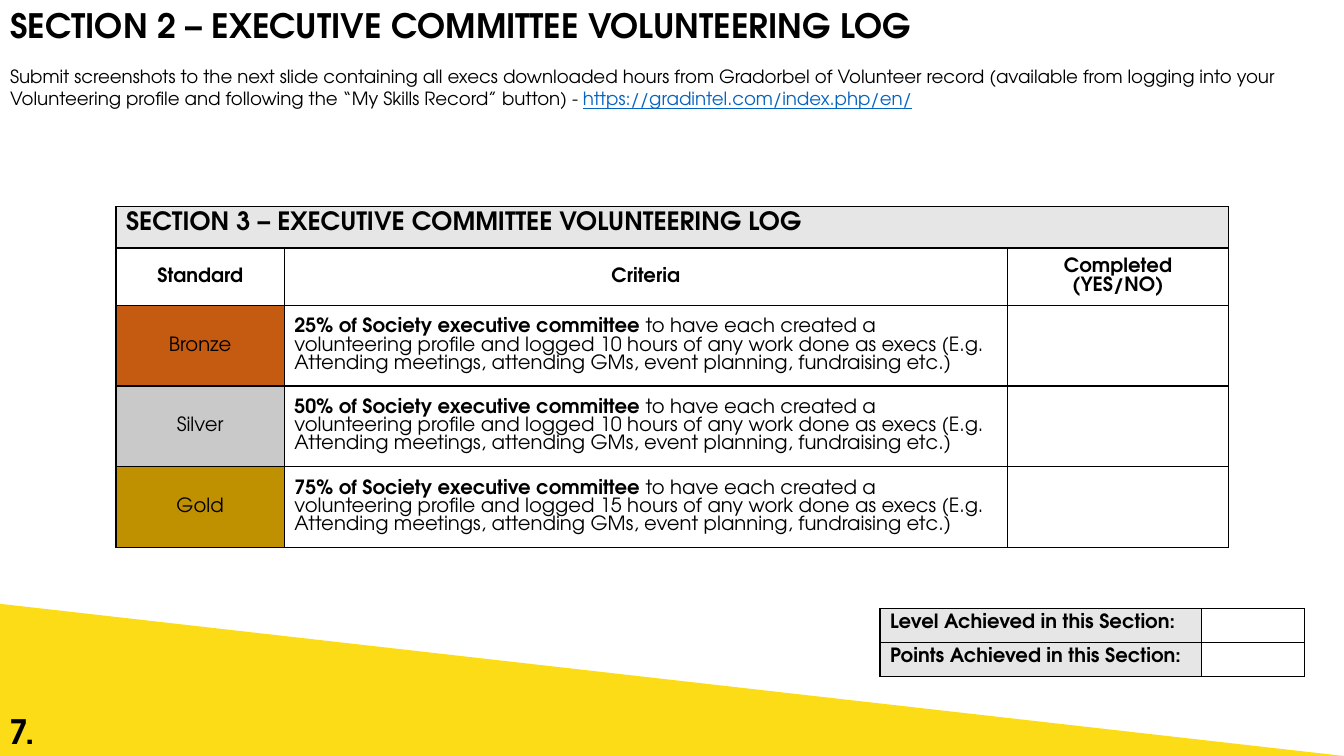
from lxml import etree
from pptx import Presentation
from pptx.dml.color import RGBColor as Rgb
from pptx.enum.shapes import MSO_SHAPE as Kind
from pptx.enum.text import MSO_ANCHOR as Anchor, MSO_AUTO_SIZE as Fit, PP_ALIGN as Align
from pptx.oxml.ns import qn
from pptx.util import Inches, Pt

WIDE, HIGH = Inches(13.33), Inches(7.5)
FONT = "TeX Gyre Adventor"
HUES = {
    "ink": "000000", "link": "0563C1", "white": "FFFFFF", "gray": "E7E6E6",
    "bronze": "C55A11", "silver": "C9C9C9", "gold": "BF9000", "yellow": "FCDC16",
}
LEVELS = [("Bronze", 25, 10), ("Silver", 50, 10), ("Gold", 75, 15)]


def hue(name):
    return Rgb.from_string(HUES[name])


def across(share):
    return round(WIDE * share / 100)


def down(share):
    return round(HIGH * share / 100)


def area(x, y, w, h):
    return across(x), down(y), across(w), down(h)


def add_run(para, text, size, bold=False, tint="ink", line=None):
    run = para.add_run()
    run.text = text
    font = run.font
    font.name, font.size, font.bold, font.underline = FONT, Pt(size), bold, line
    font.color.rgb = hue(tint)


def set_frame(frame):
    frame.word_wrap = True
    frame.auto_size = Fit.NONE
    frame.vertical_anchor = Anchor.TOP
    para = frame.paragraphs[0]
    para.alignment = Align.LEFT
    para.space_before = Pt(0)
    return para


def fill_holder(holder, spot):
    holder.left, holder.top, holder.width, holder.height = spot
    para = set_frame(holder.text_frame)
    props = para._p.get_or_add_pPr()
    props.set("marL", "0")
    props.set("indent", "0")
    etree.SubElement(props, qn("a:buNone"))
    return para


def add_edges(cell):
    props = cell._tc.get_or_add_tcPr()
    for side in ("lnL", "lnR", "lnT", "lnB"):
        edge = etree.SubElement(props, qn(f"a:{side}"), w=str(Pt(1)))
        fill = etree.SubElement(edge, qn("a:solidFill"))
        etree.SubElement(fill, qn("a:srgbClr"), val=HUES["ink"])


def set_cell(cell, tint, runs=(), size=14, align=Align.LEFT, anchor=Anchor.TOP):
    cell.fill.solid()
    cell.fill.fore_color.rgb = hue(tint)
    cell.vertical_anchor = anchor
    para = cell.text_frame.paragraphs[0]
    para.alignment = align
    for text, bold in runs:
        add_run(para, text, size, bold)


def add_grid(slide, x, y, cols, rows):
    spot = area(x, y, sum(cols), sum(rows))
    grid = slide.shapes.add_table(len(rows), len(cols), *spot).table
    grid.first_row = grid.horz_banding = False
    for col, share in zip(grid.columns, cols):
        col.width = across(share)
    for row, share in zip(grid.rows, rows):
        row.height = down(share)
    for cell in grid.iter_cells():
        add_edges(cell)
        cell.fill.background()
        end = cell.text_frame.paragraphs[0]._p.get_or_add_endParaRPr()
        end.set("sz", "1400")
    return grid


def add_log(slide):
    grid = add_grid(slide, 8.63, 27.33, [12.53, 53.78, 16.5], [5.47, 7.6] + [10.67] * 3)
    grid.cell(0, 0).merge(grid.cell(0, 2))
    head = "SECTION 3 – EXECUTIVE COMMITTEE VOLUNTEERING LOG"
    set_cell(grid.cell(0, 0), "gray", [(head, True)], 18)
    for col, text in enumerate(["Standard", "Criteria", "Completed (YES/NO)"]):
        set_cell(grid.cell(1, col), "white", [(text, True)], 14, Align.CENTER, Anchor.MIDDLE)
    for row, (level, part, hours) in enumerate(LEVELS, 2):
        rule = [
            (f"{part}% of Society executive committee ", True),
            (f"to have each created a volunteering profile and logged {hours} hours of any "
             "work done as execs (E.g. Attending meetings, attending GMs, event planning, "
             "fundraising etc.)", False),
        ]
        set_cell(grid.cell(row, 0), level.lower(), [(level, False)], 14,
                 Align.CENTER, Anchor.MIDDLE)
        set_cell(grid.cell(row, 1), "white", rule, anchor=Anchor.MIDDLE)
        set_cell(grid.cell(row, 2), "white")


def add_score(slide):
    grid = add_grid(slide, 65.48, 80.53, [23.93, 7.65], [4.47] * 2)
    for row, word in enumerate(["Level", "Points"]):
        set_cell(grid.cell(row, 0), "gray", [(f"{word} Achieved in this Section:", True)])


def add_wedge(slide):
    wedge = slide.shapes.add_shape(Kind.RIGHT_TRIANGLE, *area(0, 79.87, 100, 20.13))
    wedge.shadow.inherit = False
    wedge.fill.solid()
    wedge.fill.fore_color.rgb = hue("yellow")
    wedge.line.fill.background()


def add_page(slide):
    box = slide.shapes.add_textbox(*area(0, 93.33, 5.1, 6.67))
    add_run(set_frame(box.text_frame), "7.", 24, True)


def main():
    deck = Presentation()
    deck.slide_width, deck.slide_height = WIDE, HIGH
    slide = deck.slides.add_slide(deck.slide_layouts[1])
    title, body = slide.placeholders
    add_run(fill_holder(title, area(0, 0, 100, 8)),
            "SECTION 2 – EXECUTIVE COMMITTEE VOLUNTEERING LOG", 24, True)
    note = fill_holder(body, area(0, 8, 100, 7.2))
    add_run(note, "Submit screenshots to the next slide containing all execs downloaded hours "
            "from Gradorbel of Volunteer record (available from logging into your Volunteering "
            "profile and following the “My Skills Record” button) - ", 13)
    add_run(note, "https://gradintel.com/index.php/en/", 13, tint="link", line=True)
    add_log(slide)
    add_wedge(slide)
    add_page(slide)
    add_score(slide)
    deck.save("out.pptx")


if __name__ == "__main__":
    main()
